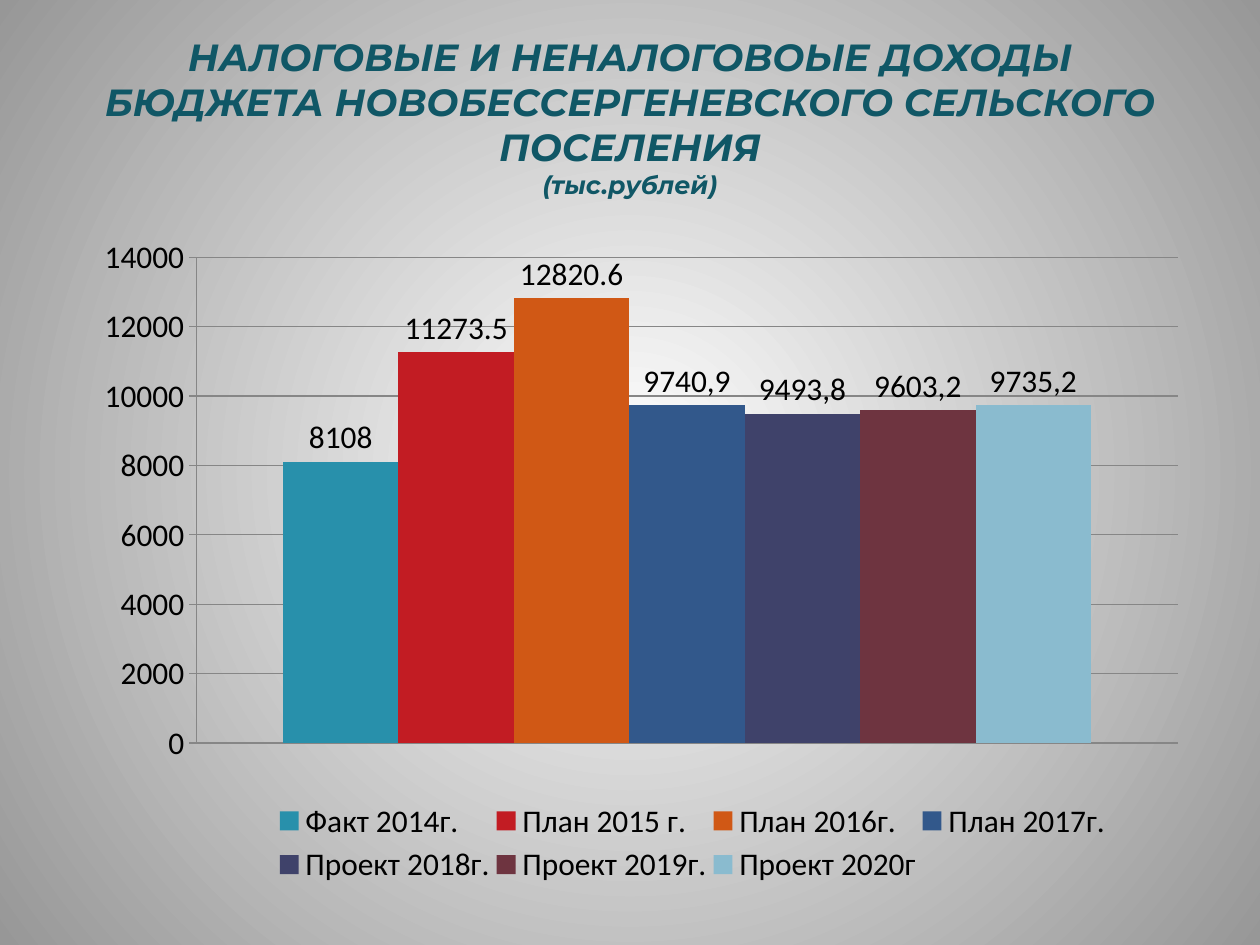
from lxml import etree
from pptx import Presentation
from pptx.chart.data import CategoryChartData
from pptx.dml.color import RGBColor
from pptx.enum.chart import XL_CHART_TYPE, XL_LABEL_POSITION, XL_LEGEND_POSITION, XL_TICK_MARK
from pptx.enum.text import MSO_ANCHOR, PP_ALIGN
from pptx.oxml import parse_xml
from pptx.oxml.ns import nsdecls
from pptx.util import Cm, Pt

COLUMNS = XL_CHART_TYPE.COLUMN_CLUSTERED
OUTSIDE_END = XL_LABEL_POSITION.OUTSIDE_END
LEGEND_BOTTOM = XL_LEGEND_POSITION.BOTTOM
TICK_OUTSIDE = XL_TICK_MARK.OUTSIDE
MIDDLE = MSO_ANCHOR.MIDDLE
CENTER = PP_ALIGN.CENTER

TITLE_FONT = "Montserrat"
CHART_FONT = "Calibri"
TITLE_COLOR = "105766"
GRID_COLOR = "868686"
TEXT_COLOR = "000000"

INCOME = [
    ("Факт 2014г.", 8108, "2890AB", None),
    ("План 2015 г.", 11273.5, "C21C23", None),
    ("План 2016г.", 12820.6, "D05815", None),
    ("План 2017г.", 9740.9, "32588B", "9740,9"),
    ("Проект 2018г.", 9493.8, "3F426A", "9493,8"),
    ("Проект 2019г.", 9603.2, "6E3440", "9603,2"),
    ("Проект 2020г", 9735.2, "8ABBCF", "9735,2"),
]


def rgb(value):
    """Turn a hex string into a colour."""
    return RGBColor.from_string(value)


def style_font(font, name, size, color):
    """Set the family, size and colour of a font."""
    font.name = name
    font.size = Pt(size)
    font.color.rgb = rgb(color)


def set_radial_background(slide, inner, outer):
    """Fill the background with a circular gradient from the centre."""
    fill = slide.background.fill
    fill.gradient()
    for stop, position, color in zip(fill.gradient_stops, (0, 1), (inner, outer)):
        stop.position = position
        stop.color.rgb = rgb(color)
    linear = slide.element.xpath(".//p:bg//a:lin")[0]
    linear.getparent().replace(linear, parse_xml(
        f'<a:path {nsdecls("a")} path="circle">'
        '<a:fillToRect l="50000" t="50000" r="50000" b="50000"/></a:path>'))


def add_run(paragraph, text, size):
    """Add a bold italic title run."""
    run = paragraph.add_run()
    run.text = text
    style_font(run.font, TITLE_FONT, size, TITLE_COLOR)
    run.font.bold = True
    run.font.italic = True


def add_title(slide):
    """Add the centred heading with its unit line."""
    shape = slide.shapes.add_textbox(Cm(1.27), Cm(0.76), Cm(22.86), Cm(3.18))
    frame = shape.text_frame
    frame.word_wrap = True
    frame.vertical_anchor = MIDDLE
    paragraph = frame.paragraphs[0]
    paragraph.alignment = CENTER
    add_run(paragraph, "НАЛОГОВЫЕ И НЕНАЛОГОВОЫЕ ДОХОДЫ БЮДЖЕТА "
            "НОВОБЕССЕРГЕНЕВСКОГО СЕЛЬСКОГО ПОСЕЛЕНИЯ", 21.6)
    paragraph.add_line_break()
    add_run(paragraph, "(тыс.рублей)", 14.4)


def manual_layout(x, y, width, height, inner=False):
    """Build a chart layout from fractions of the chart area."""
    layout = parse_xml(f'<c:layout {nsdecls("c")}><c:manualLayout/></c:layout>')
    settings = [("layoutTarget", "inner")] if inner else []
    settings += [("xMode", "edge"), ("yMode", "edge"),
                 ("x", x), ("y", y), ("w", width), ("h", height)]
    for tag, value in settings:
        etree.SubElement(layout[0], f"{{{layout.nsmap['c']}}}{tag}", val=str(value))
    return layout


def place_plot(chart, layout):
    """Give the plot area a fixed place."""
    plot_area = chart.element.xpath(".//c:plotArea")[0]
    for old in plot_area.xpath("./c:layout"):
        plot_area.remove(old)
    plot_area.insert(0, layout)


def place_legend(chart, layout):
    """Show the legend at the bottom in a fixed place."""
    chart.has_legend = True
    chart.legend.position = LEGEND_BOTTOM
    chart.legend.include_in_layout = False
    style_font(chart.legend.font, CHART_FONT, 18, TEXT_COLOR)
    legend = chart.element.xpath(".//c:legend")[0]
    for old in legend.xpath("./c:layout"):
        legend.remove(old)
    legend.xpath("./c:legendPos")[0].addnext(layout)


def style_axes(chart):
    """Hide the category axis and draw the value axis with gridlines."""
    chart.category_axis.visible = False
    axis = chart.value_axis
    axis.minimum_scale, axis.maximum_scale, axis.major_unit = 0, 14000, 2000
    axis.major_tick_mark = TICK_OUTSIDE
    axis.has_major_gridlines = True
    for line in (axis.format.line, axis.major_gridlines.format.line):
        line.color.rgb = rgb(GRID_COLOR)
        line.width = Pt(0.75)


def style_series(series, color, label):
    """Colour one column and show its value or its own label text."""
    series.format.fill.solid()
    series.format.fill.fore_color.rgb = rgb(color)
    labels = series.data_labels
    labels.show_value = True
    labels.position = OUTSIDE_END
    style_font(labels.font, CHART_FONT, 18, TEXT_COLOR)
    if label:
        point_label = series.points[0].data_label
        run = point_label.text_frame.paragraphs[0].add_run()
        run.text = label
        style_font(run.font, CHART_FONT, 18, TEXT_COLOR)
        point_label.position = OUTSIDE_END


def add_income_chart(slide):
    """Add the column chart of income by year."""
    data = CategoryChartData()
    data.categories = ["1"]
    for name, value, _, _ in INCOME:
        data.add_series(name, [value])
    chart = slide.shapes.add_chart(
        COLUMNS, Cm(2.11), Cm(4.52), Cm(22.07), Cm(13.41), data).chart
    chart.has_title = False
    style_font(chart.font, CHART_FONT, 18, TEXT_COLOR)
    plot = chart.plots[0]
    plot.gap_width, plot.overlap = 150, 0
    plot.vary_by_categories = False
    style_axes(chart)
    for series, (_, _, color, label) in zip(plot.series, INCOME):
        style_series(series, color, label)
    place_plot(chart, manual_layout(0.08, 0.05, 0.9, 0.73, inner=True))
    place_legend(chart, manual_layout(0.15, 0.86, 0.77, 0.14))


def main():
    """Build and save the slide."""
    presentation = Presentation()
    presentation.slide_width, presentation.slide_height = Cm(25.4), Cm(19.05)
    slide = presentation.slides.add_slide(presentation.slide_layouts[6])
    set_radial_background(slide, "FFFFFF", "979797")
    add_title(slide)
    add_income_chart(slide)
    presentation.save("out.pptx")


if __name__ == "__main__":
    main()
